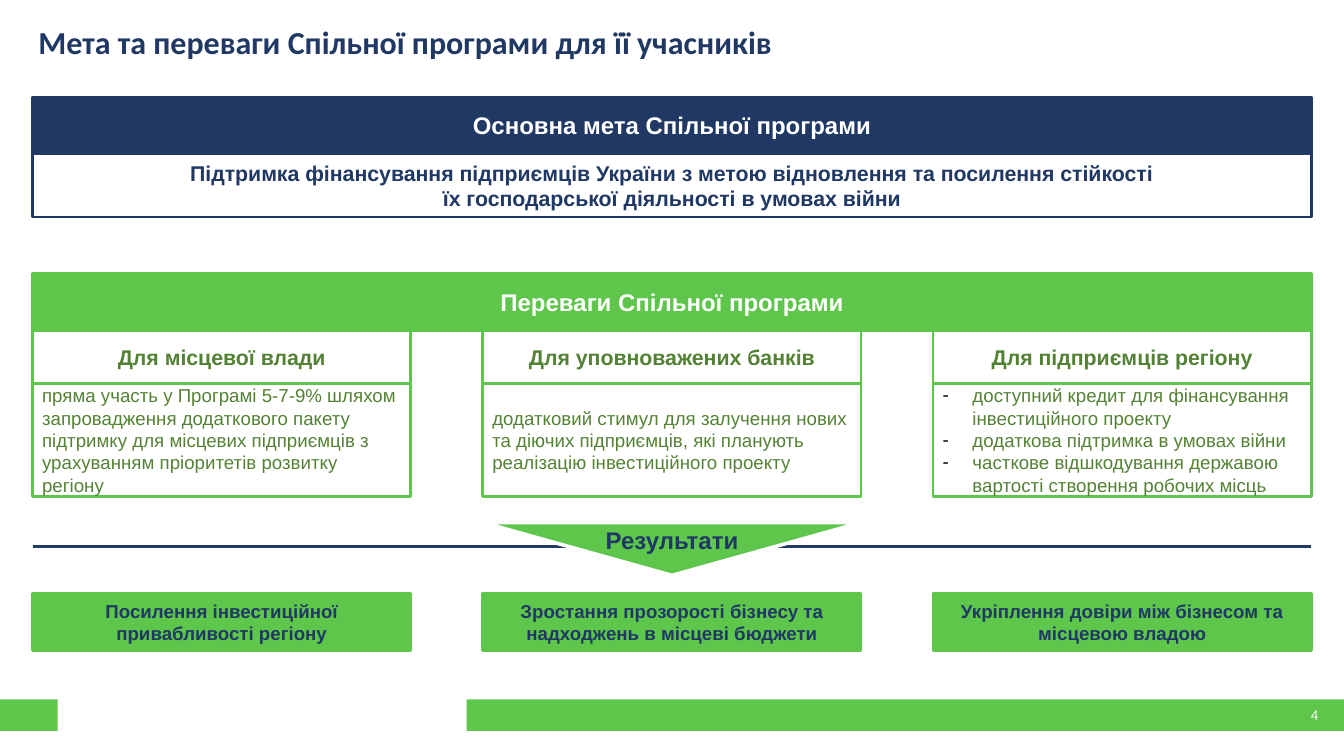
import pptx
import pptx.util
import pptx.dml.color
import pptx.enum.shapes
import pptx.enum.text
import lxml.etree
from dataclasses import dataclass

TITLE = "Мета та переваги Спільної програми для її учасників"
GOAL = "Основна мета Спільної програми"
GOAL_LINES = [
    "Підтримка фінансування підприємців України з метою відновлення та посилення стійкості",
    "їх господарської діяльності в умовах війни",
]
BENEFITS = "Переваги Спільної програми"
COLUMNS = [
    {
        "head": "Для місцевої влади",
        "body": ["пряма участь у Програмі 5-7-9% шляхом запровадження додаткового пакету "
                 "підтримку для місцевих підприємців з урахуванням пріоритетів розвитку регіону"],
        "result": "Посилення інвестиційної привабливості регіону",
    },
    {
        "head": "Для уповноважених банків",
        "body": ["додатковий стимул для залучення нових та діючих підприємців, "
                 "які планують реалізацію інвестиційного проекту"],
        "result": "Зростання прозорості бізнесу та надходжень в місцеві бюджети",
    },
    {
        "head": "Для підприємців регіону",
        "body": ["доступний кредит для фінансування інвестиційного проекту",
                 "додаткова підтримка в умовах війни",
                 "часткове відшкодування державою вартості створення робочих місць"],
        "result": "Укріплення довіри між бізнесом та місцевою владою",
    },
]
RESULTS = "Результати"
PAGE = "4"


@dataclass(frozen=True)
class Theme:
    navy: str = "203864"
    green: str = "5DC64B"
    dark_green: str = "548235"
    white: str = "FFFFFF"
    black: str = "000000"
    heading_font: str = "Calibri"
    body_font: str = "Arial"
    title: int = 24
    band: int = 18
    head: int = 16
    body: int = 14
    page: int = 11


T = Theme()
W, H = 14, 7.87
MARGIN = 0.34
CONTENT_W = W - 2 * MARGIN
COL_W = 3.94
STEP = (CONTENT_W - COL_W) / (len(COLUMNS) - 1)
BAND_H, HEAD_H = 0.59, 0.55
GOAL_Y, BENEFITS_Y = 1.01, 2.85
HEAD_Y = BENEFITS_Y + BAND_H
BODY_Y = HEAD_Y + HEAD_H
RESULT_Y = 6.18
FOOTER = (7.28, 0.33)

Inches, Pt = pptx.util.Inches, pptx.util.Pt
RGB = pptx.dml.color.RGBColor.from_string
SHAPE = pptx.enum.shapes.MSO_SHAPE
ALIGN = pptx.enum.text.PP_ALIGN


def add_dash(p):
    pPr = p._p.get_or_add_pPr()
    pPr.set("marL", str(Inches(0.31)))
    pPr.set("indent", str(-Inches(0.31)))
    ns = pptx.oxml.ns.qn
    color = lxml.etree.SubElement(pPr, ns("a:buClr"))
    lxml.etree.SubElement(color, ns("a:srgbClr"), val=T.black)
    lxml.etree.SubElement(pPr, ns("a:buFont"), typeface=T.body_font)
    lxml.etree.SubElement(pPr, ns("a:buChar"), char="-")


def write(sp, lines, size=T.body, color=T.navy, bold=True, font=T.body_font,
          align=ALIGN.CENTER, inset=(0.1, 0.05, 0.1, 0.05), dash=False):
    tf = sp.text_frame
    tf.word_wrap = True
    tf.auto_size = pptx.enum.text.MSO_AUTO_SIZE.NONE
    tf.vertical_anchor = pptx.enum.text.MSO_ANCHOR.MIDDLE
    tf.margin_left, tf.margin_top, tf.margin_right, tf.margin_bottom = map(Inches, inset)
    for i, line in enumerate(lines):
        p = tf.add_paragraph() if i else tf.paragraphs[0]
        p.alignment = align
        p.space_before = Pt(0)
        if dash:
            add_dash(p)
        r = p.add_run()
        r.text = line
        r.font.size, r.font.bold, r.font.name = Pt(size), bold, font
        r.font.color.rgb = RGB(color)


def place(sp, x, y, w, h):
    sp.left, sp.top, sp.width, sp.height = map(Inches, (x, y, w, h))


def paint(sp, fill=None, line=None, width=2):
    if fill:
        sp.fill.solid()
        sp.fill.fore_color.rgb = RGB(fill)
    else:
        sp.fill.background()
    if line:
        sp.line.color.rgb = RGB(line)
        sp.line.width = Pt(width)
    else:
        sp.line.fill.background()


def add_box(s, x, y, w, h, fill=None, line=None, width=2, kind=SHAPE.RECTANGLE):
    sp = s.shapes.add_shape(kind, *map(Inches, (x, y, w, h)))
    sp.shadow.inherit = False
    paint(sp, fill, line, width)
    return sp


def add_label(s, x, y, w, h, text, **fmt):
    write(s.shapes.add_textbox(*map(Inches, (x, y, w, h))), [text], **fmt)


def build():
    prs = pptx.Presentation()
    prs.slide_width, prs.slide_height = Inches(W), Inches(H)
    s = prs.slides.add_slide(prs.slide_layouts[1])

    for x, w in [(4.86, W - 4.86), (0, 0.6)]:
        add_box(s, x, FOOTER[0], w, FOOTER[1], T.green)
    add_label(s, 12.78, FOOTER[0], 1.05, FOOTER[1], PAGE, size=T.page, color=T.white,
              bold=False, font=T.heading_font, align=ALIGN.RIGHT)

    place(s.shapes.title, 0.36, 0.1, 9.59, 0.66)
    write(s.shapes.title, [TITLE], size=T.title, font=T.heading_font,
          align=ALIGN.LEFT, inset=(0.04, 0, 0, 0))

    for y, color, text in [(GOAL_Y, T.navy, GOAL), (BENEFITS_Y, T.green, BENEFITS)]:
        write(add_box(s, MARGIN, y, CONTENT_W, BAND_H, color, color), [text],
              size=T.band, color=T.white)
    write(add_box(s, MARGIN, GOAL_Y + BAND_H, CONTENT_W, 0.66, T.white, T.navy),
          GOAL_LINES, size=T.head)

    for i, col in enumerate(COLUMNS):
        x = MARGIN + i * STEP
        write(add_box(s, x, HEAD_Y, COL_W, HEAD_H, line=T.green), [col["head"]],
              size=T.head, color=T.dark_green)
        is_list = len(col["body"]) > 1
        if is_list:
            sp = s.placeholders[1]
            place(sp, x, BODY_Y, COL_W, 1.18)
            paint(sp, line=T.green)
        else:
            sp = add_box(s, x, BODY_Y, COL_W, 1.18, line=T.green)
        write(sp, col["body"], color=T.dark_green, bold=False,
              align=ALIGN.LEFT, dash=is_list)
        write(add_box(s, x, RESULT_Y, COL_W, BAND_H, T.green, T.green),
              [col["result"]], inset=(0.04,) * 4)

    ends = (MARGIN, 5.69, W - MARGIN, 5.69)
    rule = s.shapes.add_connector(pptx.enum.shapes.MSO_CONNECTOR.STRAIGHT, *map(Inches, ends))
    rule.line.color.rgb = RGB(T.navy)
    rule.line.width = Pt(2.25)
    lxml.etree.SubElement(rule._element.spPr, pptx.oxml.ns.qn("a:effectLst"))
    arrow = add_box(s, MARGIN + STEP, 5.44, COL_W, 0.55, T.green, T.white, 2.75,
                    SHAPE.ISOSCELES_TRIANGLE)
    arrow.rotation = 180
    add_label(s, (W - 1.65) / 2, 5.47, 1.65, 0.31, RESULTS, size=T.band)

    prs.save("out.pptx")


if __name__ == "__main__":
    build()
